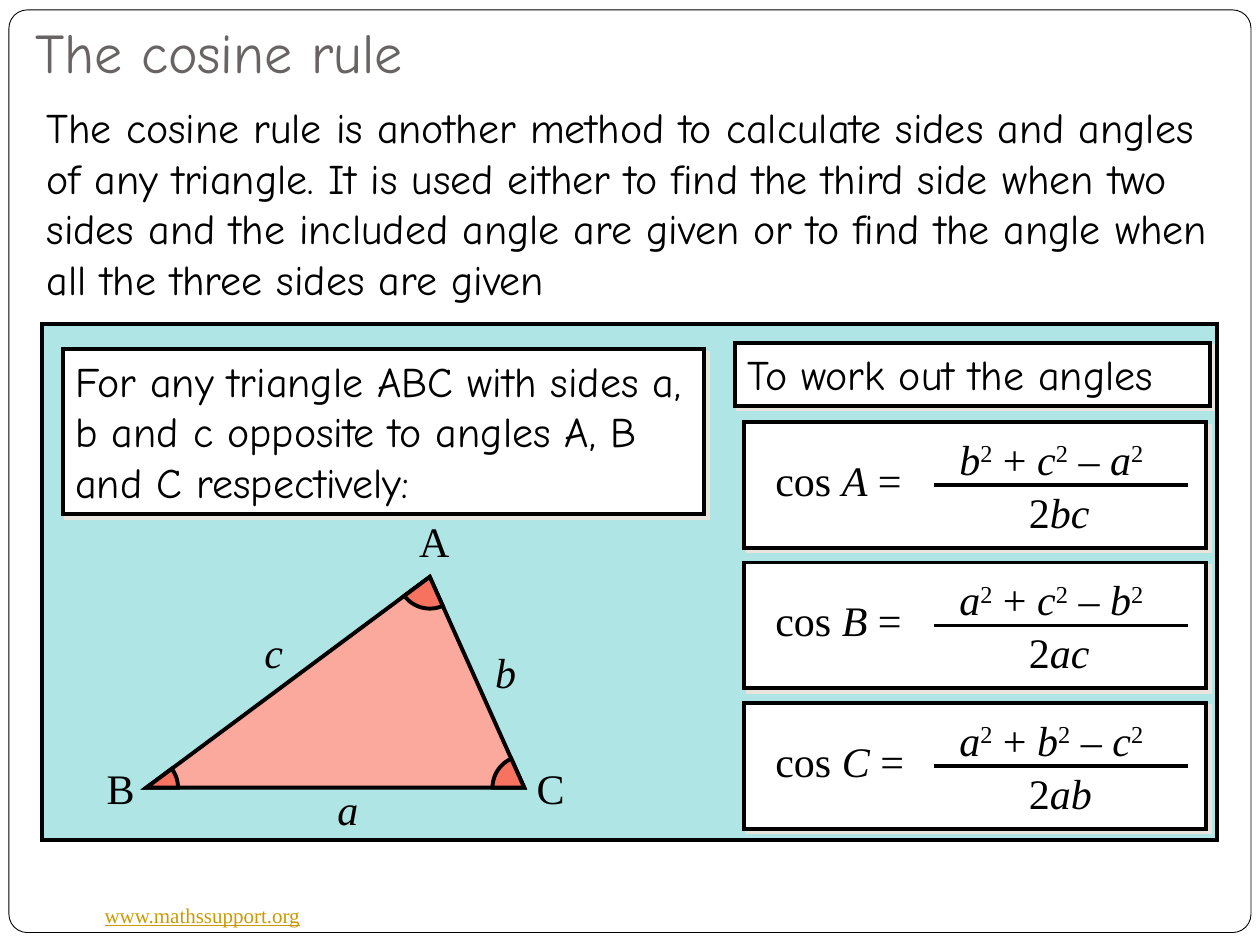
import math

import pptx
import pptx.dml.color
import pptx.enum.shapes
import pptx.enum.text
import pptx.oxml
import pptx.oxml.ns
import pptx.util

Cm = pptx.util.Cm
Pt = pptx.util.Pt
RGBColor = pptx.dml.color.RGBColor
Shape = pptx.enum.shapes.MSO_SHAPE
Anchor = pptx.enum.text.MSO_ANCHOR
SPACE = pptx.oxml.ns.nsdecls("a")

BLACK = RGBColor(0x00, 0x00, 0x00)
WHITE = RGBColor(0xFF, 0xFF, 0xFF)
GREY = RGBColor(0x69, 0x64, 0x64)
GOLD = RGBColor(0xCC, 0x99, 0x00)
AQUA = RGBColor(0xAF, 0xE5, 0xE5)
PINK = RGBColor(0xFB, 0xA8, 0x9D)
CORAL = RGBColor(0xF8, 0x72, 0x60)
SHADE = RGBColor(0xE9, 0xE5, 0xDC)
COMIC = "Comic Neue"
ROMAN = "Times New Roman"


def paint(shape, fill, width=2.25):
    shape.shadow.inherit = False
    shape.fill.solid()
    shape.fill.fore_color.rgb = fill
    shape.line.color.rgb = BLACK
    shape.line.width = Pt(width)
    shape.element.spPr.find(pptx.oxml.ns.qn("a:ln")).append(
        pptx.oxml.parse_xml(f'<a:miter {SPACE} lim="800000"/>'))


def cast(shape):
    glow = pptx.oxml.parse_xml(
        f'<a:outerShdw {SPACE} dist="35921" dir="2700000" algn="ctr" rotWithShape="0">'
        f'<a:srgbClr val="{SHADE}"/></a:outerShdw>')
    shape.element.spPr.find(pptx.oxml.ns.qn("a:effectLst")).append(glow)


def panel(slide, box, fill, kind=Shape.RECTANGLE, width=2.25):
    shape = slide.shapes.add_shape(kind, *map(Cm, box))
    paint(shape, fill, width)
    return shape


def write(shape, runs, face=ROMAN, size=24, color=BLACK, wrap=False, anchor=Anchor.TOP):
    frame = shape.text_frame
    frame.word_wrap = wrap
    frame.vertical_anchor = anchor
    para = frame.paragraphs[0]
    para.alignment = pptx.enum.text.PP_ALIGN.LEFT
    for text, style in runs:
        run = para.add_run()
        run.text = text
        run.font.name = face
        run.font.size = Pt(size)
        run.font.color.rgb = color
        if style == "italic":
            run.font.italic = True
        elif style == "line":
            run.font.underline = True
        elif style == "super":
            run.font._element.set("baseline", "30000")


def label(slide, box, runs, **look):
    shape = slide.shapes.add_textbox(*map(Cm, box))
    write(shape, runs, **look)
    return shape


def note(slide, box, text, wrap):
    shape = panel(slide, box, WHITE)
    cast(shape)
    write(shape, [(text, "")], face=COMIC, wrap=wrap)


def outline(slide, points, fill):
    dots = [(Cm(x), Cm(y)) for x, y in points]
    pen = slide.shapes.build_freeform(*dots[0])
    pen.add_line_segments(dots[1:], close=True)
    paint(pen.convert_to_shape(), fill)


def sector(slide, tip, start, end, radius=0.64, steps=16):
    first, last = (math.atan2(y - tip[1], x - tip[0]) for x, y in (start, end))
    turn = math.remainder(last - first, 2 * math.pi)
    angles = [first + turn * i / steps for i in range(steps + 1)]
    arc = [(tip[0] + radius * math.cos(a), tip[1] + radius * math.sin(a)) for a in angles]
    outline(slide, arc + [tip], CORAL)


def triangle(slide, box):
    left, top, width, height = box
    peak = (left + 0.75 * width, top)
    west = (left, top + height)
    east = (left + width, top + height)
    outline(slide, [west, east, peak], PINK)
    sector(slide, west, east, peak)
    sector(slide, east, peak, west)
    sector(slide, peak, west, east)
    for text, style, x, y, wide in (
        ("A", "", 5.25, -1.37, 1.14),
        ("B", "", -1.05, 3.61, 1.07),
        ("C", "", 7.62, 3.61, 1.02),
        ("c", "italic", 2.13, 0.87, 0.89),
        ("a", "italic", 3.6, 4.04, 0.94),
        ("b", "italic", 6.78, 1.27, 0.94),
    ):
        label(slide, (left + x, top + y, wide, 1.28), [(text, style)])


def formula(slide, box, angle, plus, minus):
    left, top, width, height = box
    cast(panel(slide, box, WHITE))
    label(slide, (left + 0.38, top + 0.53, 3.3, 1.28),
          [("cos ", ""), (angle, "italic"), (" =", "")])
    square = ("2", "super")
    above = [(plus[0], "italic"), square, (" + ", ""), (plus[1], "italic"), square,
             (" – ", ""), (minus, "italic"), square]
    label(slide, (left + 4.09, top + 0.1, 4.6, 1.28), above)
    middle = Cm(top + height / 2)
    bar = slide.shapes.add_connector(
        pptx.enum.shapes.MSO_CONNECTOR.STRAIGHT,
        Cm(left + 3.83), middle, Cm(left + 8.94), middle)
    bar.line.color.rgb = BLACK
    bar.line.width = Pt(2.25)
    bar.element.spPr.append(pptx.oxml.parse_xml(f'<a:effectLst {SPACE}/>'))
    label(slide, (left + 5.49, top + 1.17, 1.85, 1.28), [("2", ""), (plus, "italic")])


def board(slide, box):
    left, top, width, height = box
    panel(slide, box, AQUA)
    note(slide, (left + 0.43, top + 0.51, 12.93, 3.33),
         "For any triangle ABC with sides a, b and c opposite to angles A, B and C respectively:",
         True)
    triangle(slide, (left + 2.11, top + 5.1, 7.62, 4.25))
    note(slide, (left + 13.97, top + 0.38, 9.58, 1.27), "To work out the angles", False)
    rules = (("A", "bc", "a"), ("B", "ac", "b"), ("C", "ab", "c"))
    for row, rule in enumerate(rules):
        formula(slide, (left + 14.16, top + 1.98 + 2.83 * row, 9.32, 2.54), *rule)


def header(slide, box):
    left, top, width, height = box
    title = label(slide, (left, top, 22.86, 1.4), [("The cosine rule", "")],
                  face=COMIC, size=32, color=GREY, wrap=True, anchor=Anchor.BOTTOM)
    title.text_frame.margin_bottom = Cm(0.25)
    label(slide, (left + 0.23, top + 1.37, width - 0.23, height - 1.37), [(
        "The cosine rule is another method to calculate sides and angles of any triangle. "
        "It is used either to find the third side when two sides and the included angle "
        "are given or to find the angle when all the three sides are given", "")],
        face=COMIC, wrap=True)


def border(slide, box):
    left, top, width, height = box
    edge = panel(slide, box, WHITE, Shape.ROUNDED_RECTANGLE, 0.5)
    edge.adjustments[0] = 0.02
    label(slide, (left + 1.68, top + 17.86, 4.5, 0.76),
          [("www.mathssupport.org", "line")], size=12, color=GOLD)


def main():
    deck = pptx.Presentation()
    deck.slide_width = Cm(25.4)
    deck.slide_height = Cm(19.05)
    slide = deck.slides.add_slide(deck.slide_layouts[6])
    border(slide, (0.18, 0.2, 25.04, 18.6))
    board(slide, (0.84, 6.53, 23.7, 10.41))
    header(slide, (0.46, 0.56, 24.6, 5.74))
    deck.save("out.pptx")


if __name__ == "__main__":
    main()
